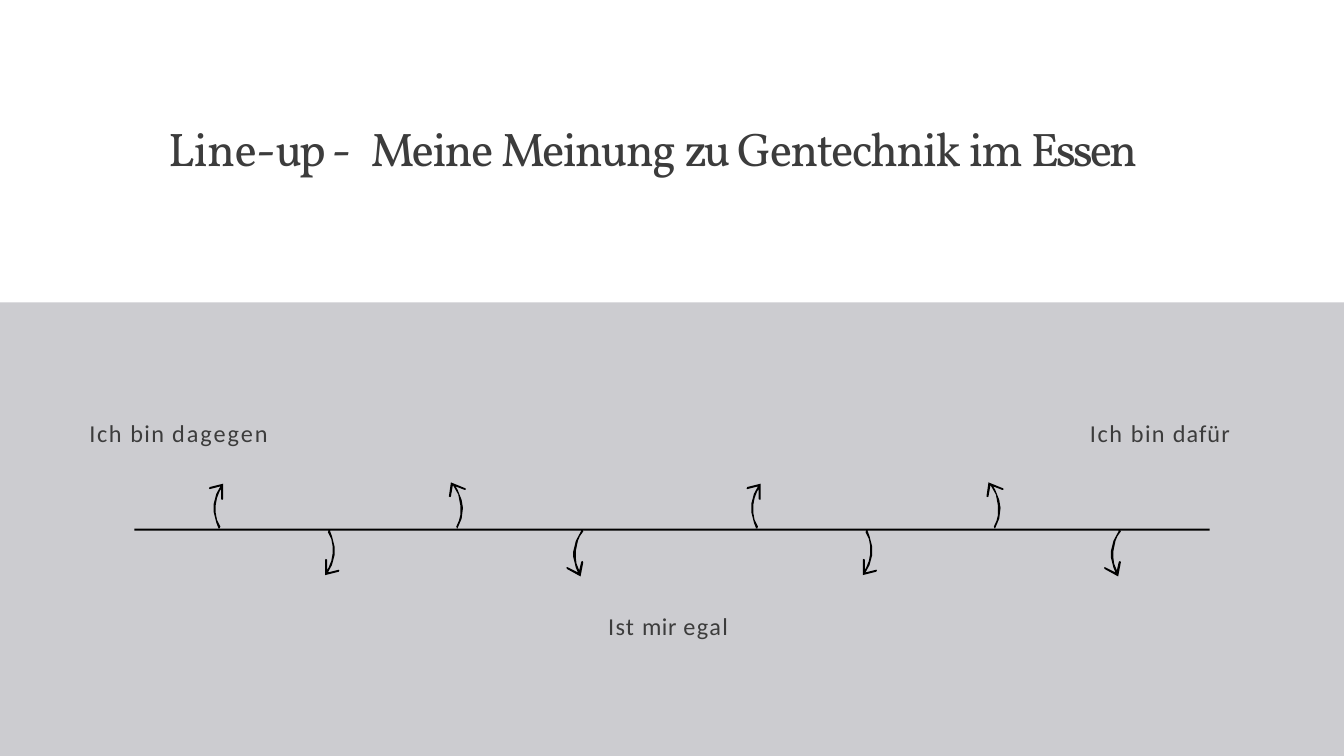
from pptx import Presentation
from pptx.dml.color import RGBColor
from pptx.enum.shapes import MSO_SHAPE
from pptx.enum.text import MSO_ANCHOR, MSO_AUTO_SIZE, PP_ALIGN
from pptx.util import Cm, Pt

RECT = MSO_SHAPE.RECTANGLE
TOP = MSO_ANCHOR.TOP
LEFT = PP_ALIGN.LEFT
FIXED = MSO_AUTO_SIZE.NONE

INK = RGBColor(0x3C, 0x3C, 0x3C)
GREY = RGBColor(0xCC, 0xCC, 0xD0)
BLACK = RGBColor(0, 0, 0)

WIDE, HIGH, SPLIT = Cm(50.8), Cm(28.58), Cm(11.43)

TITLE = [("Line-", -0.8), ("up ", -3.9), ("- ", 5.7), ("Meine ", -1.9),
         ("Meinung ", -2), ("zu ", -3.5), ("Gentechnik ", -1.8),
         ("im ", -1.9), ("Essen", -3.4)]

LABELS = [
    (3.38, 15.8, 6.98, [("Ich ", 1.7), ("bin ", 1.4), ("dagegen", 2.1)]),
    (41.2, 15.8, 5.49, [("Ich ", 1.7), ("bin ", 1.4), ("dafür", 1.1)]),
    (22.99, 23.06, 4.8, [("Ist ", 1.3), ("mir ", 0.6), ("egal", 1.6)]),
]

# Outlines are in hundredths of an inch
UNIT = Cm(2.54) / 100
HALF = 800
BAR = [(200, 787), (1000, 787), (1000, 790), (200, 790)]
RIGHT_UP = [(332, 720), (312, 725), (311, 727), (312, 728), (328, 724),
            (322, 735), (318, 750), (318, 762), (322, 778), (325, 786),
            (327, 786), (328, 784), (323, 774), (321, 763), (321, 752),
            (323, 741), (327, 731), (329, 728), (329, 743), (331, 744),
            (332, 743)]
LEFT_UP = [(671, 718), (668, 739), (670, 740), (671, 739), (674, 722),
           (678, 729), (682, 736), (685, 752), (685, 767), (683, 775),
           (679, 784), (680, 786), (681, 786), (687, 772), (689, 756),
           (687, 744), (681, 729), (678, 724), (691, 729), (693, 729),
           (693, 727)]
LEFT_DOWN = [(864, 858), (868, 837), (867, 835), (865, 836), (862, 849),
             (858, 839), (857, 831), (857, 820), (860, 805), (863, 798),
             (868, 791), (867, 790), (865, 790), (857, 805), (853, 821),
             (853, 829), (857, 845), (860, 852), (844, 844), (843, 845),
             (844, 847)]
RIGHT_DOWN = [(816 - x, 1576 - y) for x, y in RIGHT_UP]
PARTS = [BAR, RIGHT_UP, LEFT_UP, RIGHT_DOWN, LEFT_DOWN]


def paint(shape, color):
    shape.shadow.inherit = False
    shape.fill.solid()
    shape.fill.fore_color.rgb = color
    shape.line.fill.background()


def write(shape, runs, face, size, left=0, top=0.03):
    frame = shape.text_frame
    frame.word_wrap = True
    frame.auto_size = FIXED
    frame.vertical_anchor = TOP
    frame.margin_left, frame.margin_top = Cm(left), Cm(top)
    frame.margin_right = frame.margin_bottom = 0
    para = frame.paragraphs[0]
    para.alignment = LEFT
    para.line_spacing = 1.0
    para.space_before = Pt(0)
    para.font.name, para.font.size = face, Pt(size)
    para.font.color.rgb = INK
    for text, gap in runs:
        run = para.add_run()
        run.text = text
        run.font._element.set("spc", str(round(gap * 100)))


def place(shape, x, y, w, h):
    shape.left, shape.top, shape.width, shape.height = Cm(x), Cm(y), Cm(w), Cm(h)


def draw_scale(shapes):
    lines = [[(x + shift, y) for x, y in part]
             for shift in (0, HALF) for part in PARTS]
    pen = shapes.build_freeform(*lines[0][0], scale=UNIT)
    for line in lines:
        pen.move_to(*line[0])
        pen.add_line_segments(line[1:], close=True)
    paint(pen.convert_to_shape(), BLACK)


def main():
    deck = Presentation()
    deck.slide_width, deck.slide_height = WIDE, HIGH
    shapes = deck.slides.add_slide(deck.slide_layouts[5]).shapes

    paint(shapes.add_shape(RECT, 0, SPLIT, WIDE, HIGH - SPLIT), GREY)

    place(shapes.title, 2.82, 2.06, 46.48, 8.97)
    write(shapes.title, TITLE, "Vollkorn", 50.5, 3.53, 2.46)

    draw_scale(shapes)

    for x, y, w, runs in LABELS:
        box = shapes.add_textbox(Cm(x), Cm(y), Cm(w), Cm(1.17))
        write(box, runs, "Calibri", 26)

    deck.save("out.pptx")


if __name__ == "__main__":
    main()
